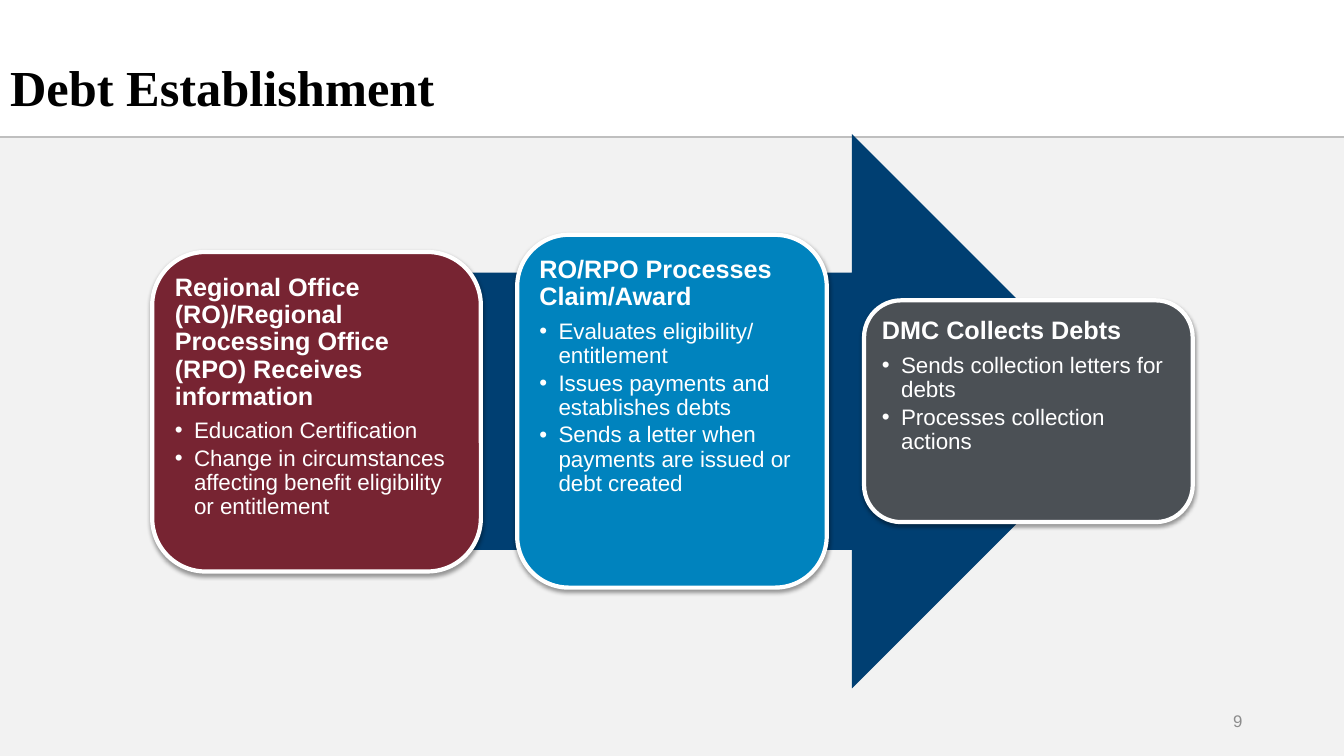
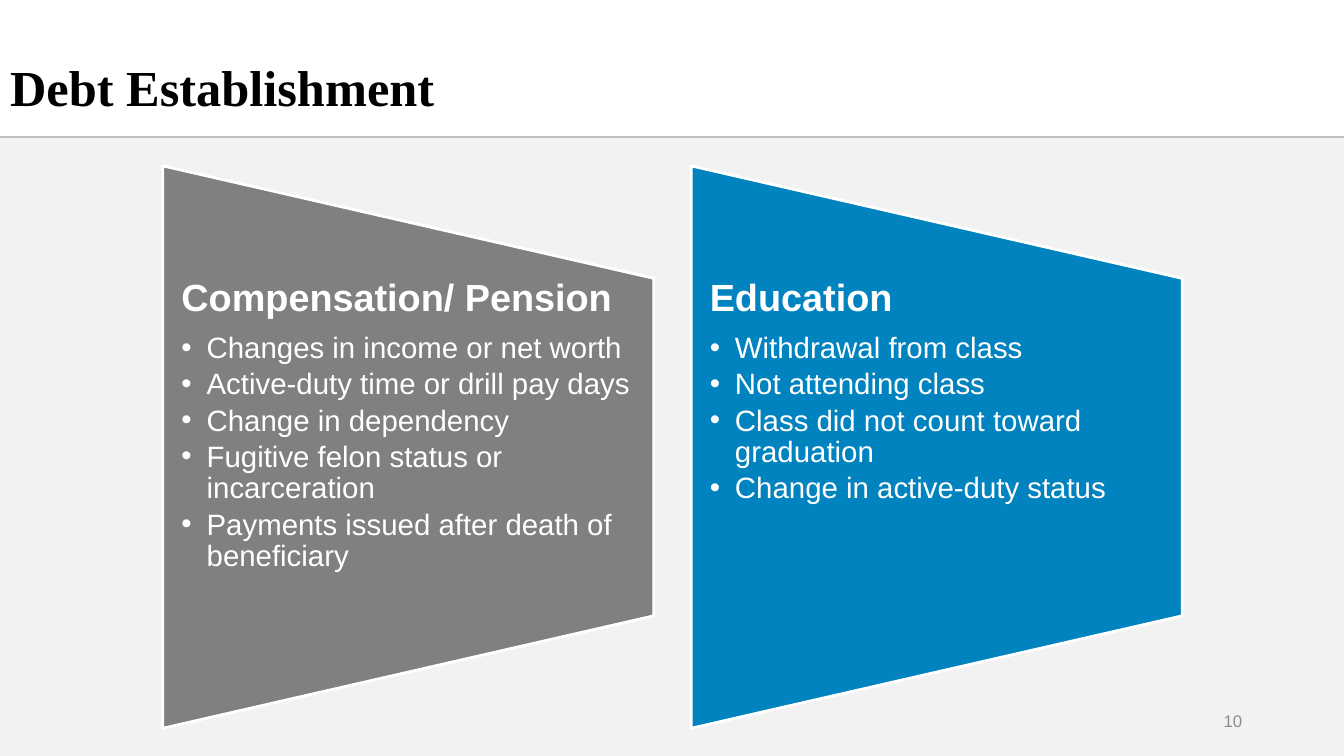
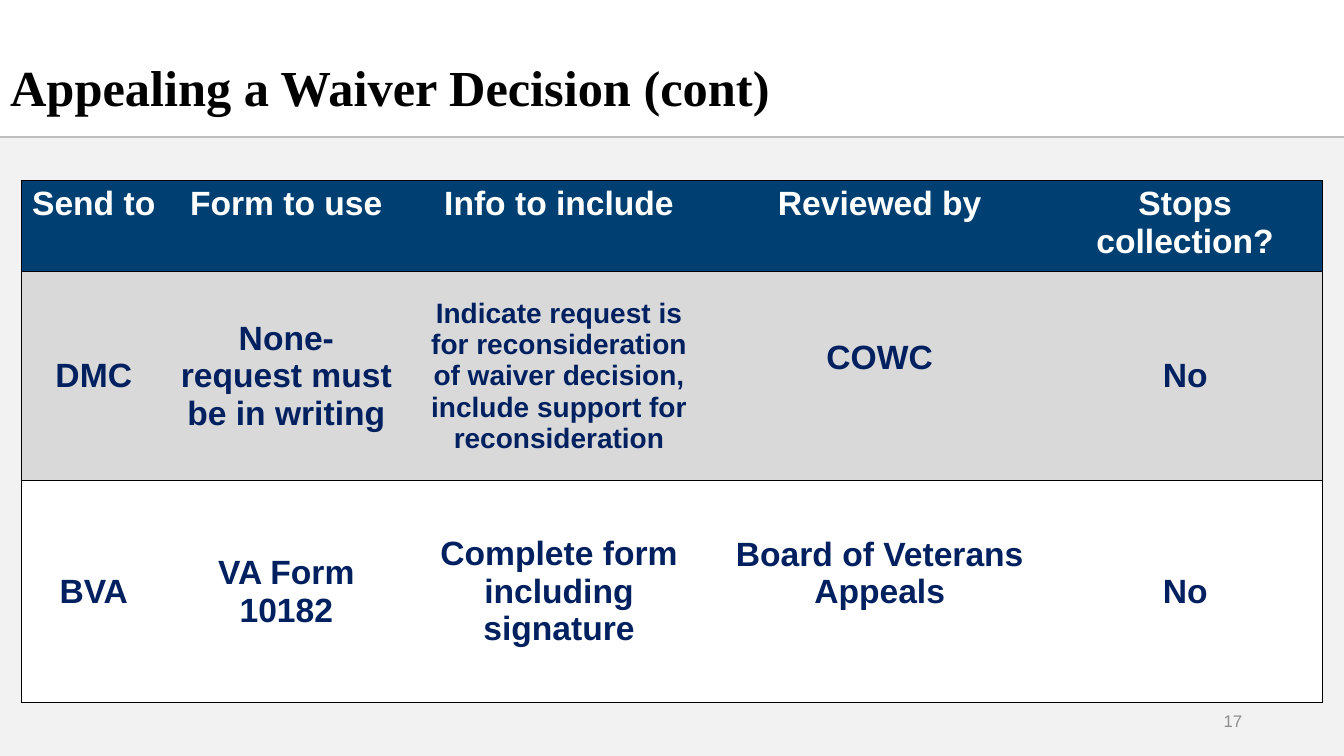
from lxml import etree
from pptx import Presentation
from pptx import util as u
from pptx.dml import color
from pptx.enum import shapes, text
from pptx.oxml import ns

Inches, Pt = u.Inches, u.Pt
NAVY, BLUE, WHITE = "003F72", "0083BE", "FFFFFF"


def rgb(value):
    return color.RGBColor.from_string(value)


def write(paragraph, words, ink, **formats):
    run = paragraph.add_run()
    run.text = words
    run.font.color.rgb = rgb(ink)
    for key, value in formats.items():
        setattr(run.font, key, value)


deck = Presentation()
deck.slide_width, deck.slide_height = Inches(13.33), Inches(7.5)
layout = deck.slide_layouts[5]
titles = [
    ("Debt Establishment", "9"),
    ("Debt Establishment", "10"),
    ("Appealing a Waiver Decision (cont)", "17"),
]
for heading, number in titles:
    slide = deck.slides.add_slide(layout)
    title = slide.shapes.title
    for key, value in dict(left=0, top=0.42, width=9, height=0.95).items():
        setattr(title, key, Inches(value))
    title.text_frame.vertical_anchor = text.MSO_ANCHOR.MIDDLE
    line = title.text_frame.paragraphs[0]
    line.alignment, line.line_spacing = text.PP_ALIGN.LEFT, 0.9
    write(line, heading, "000000", name="Times New Roman", size=Pt(36), bold=True)

    page = slide.shapes.add_textbox(Inches(9.42), Inches(6.95), Inches(3), Inches(0.4))
    page.text_frame.word_wrap = True
    page.text_frame.vertical_anchor = text.MSO_ANCHOR.MIDDLE
    page.text_frame.paragraphs[0].alignment = text.PP_ALIGN.RIGHT
    write(page.text_frame.paragraphs[0], number, "8C8C8C", name="Arial", size=Pt(12))

process, causes, appeals = deck.slides

backdrop = process.shapes.add_shape(
    shapes.MSO_SHAPE.RECTANGLE, 0, Inches(1.37), Inches(13.33), Inches(6.13)
)
backdrop.shadow.inherit = False
backdrop.fill.solid()
backdrop.fill.fore_color.rgb = rgb("F2F2F2")
backdrop.line.fill.background()
rule = process.shapes.add_connector(
    shapes.MSO_CONNECTOR.STRAIGHT, 0, Inches(1.36), Inches(13.33), Inches(1.36)
)
rule.line.color.rgb = rgb("BFBFBF")
rule.line.width = Pt(1.5)
etree.SubElement(rule.element.spPr, ns.qn("a:effectLst"))
for position, part in enumerate((backdrop, rule), 2):
    layout.shapes.element.insert(position, part.element)

arrow = process.shapes.add_shape(
    shapes.MSO_SHAPE.RIGHT_ARROW, Inches(2.13), Inches(1.33), Inches(9.07), Inches(5.5)
)
arrow.shadow.inherit = False
arrow.fill.solid()
arrow.fill.fore_color.rgb = rgb(NAVY)
arrow.line.fill.background()

panels = []
steps = [
    ((1.51, 2.5, 3.26, 3.17), "772432",
     "Regional Office (RO)/Regional Processing Office (RPO) Receives information",
     ["Education Certification",
      "Change in circumstances affecting benefit eligibility or entitlement"]),
    ((5.13, 2.33, 3.07, 3.5), BLUE, "RO/RPO Processes Claim/Award",
     ["Evaluates eligibility/ entitlement",
      "Issues payments and establishes debts",
      "Sends a letter when payments are issued or debt created"]),
    ((8.57, 2.98, 3.26, 2.2), "4B5055", "DMC Collects Debts",
     ["Sends collection letters for debts", "Processes collection actions"]),
]
for box, fill, heading, points in steps:
    step = process.shapes.add_shape(
        shapes.MSO_SHAPE.ROUNDED_RECTANGLE, *map(Inches, box)
    )
    step.shadow.inherit = False
    step.fill.solid()
    step.fill.fore_color.rgb = rgb(fill)
    step.line.color.rgb = rgb(WHITE)
    step.line.width = Pt(3)
    shadow = etree.SubElement(
        step.element.spPr.find(ns.qn("a:effectLst")), ns.qn("a:outerShdw"),
        blurRad=str(Pt(3.1)), dist=str(Pt(1.6)), dir="5400000", rotWithShape="0",
    )
    shade = etree.SubElement(shadow, ns.qn("a:srgbClr"), val="000000")
    etree.SubElement(shade, ns.qn("a:alpha"), val="38000")
    panels.append((step.text_frame, heading, points, 18, 16, 0.19, 0.07, 0.07))

groups = [
    (1.61, "808080", "Compensation/ Pension",
     ["Changes in income or net worth",
      "Active-duty time or drill pay days",
      "Change in dependency",
      "Fugitive felon status or incarceration",
      "Payments issued after death of beneficiary"]),
    (6.85, BLUE, "Education",
     ["Withdrawal from class",
      "Not attending class",
      "Class did not count toward graduation",
      "Change in active-duty status"]),
]
for left, fill, heading, points in groups:
    wedge = causes.shapes.add_shape(
        shapes.MSO_SHAPE.FLOWCHART_MANUAL_OPERATION,
        Inches(left - 0.35), Inches(2), Inches(5.58), Inches(4.87),
    )
    wedge.rotation = 270
    wedge.shadow.inherit = False
    wedge.fill.solid()
    wedge.fill.fore_color.rgb = rgb(fill)
    wedge.line.color.rgb = rgb(WHITE)
    wedge.line.width = Pt(2)
    cause = causes.shapes.add_textbox(
        Inches(left), Inches(2.77), Inches(4.87), Inches(3.35)
    )
    panels.append((cause.text_frame, heading, points, 27, 21, 0.25, 0.19, 0))

for frame, heading, points, heading_size, point_size, indent, side, edge in panels:
    frame.word_wrap = True
    frame.vertical_anchor = text.MSO_ANCHOR.TOP
    frame.margin_left = frame.margin_right = Inches(side)
    frame.margin_top = frame.margin_bottom = Inches(edge)
    for order, words in enumerate([heading, *points]):
        line = frame.add_paragraph() if order else frame.paragraphs[0]
        size = point_size if order else heading_size
        if order:
            properties = line._p.get_or_add_pPr()
            properties.set("marL", str(Inches(indent)))
            properties.set("indent", str(-Inches(indent)))
            etree.SubElement(properties, ns.qn("a:buFont"), typeface="Arial")
            etree.SubElement(properties, ns.qn("a:buChar"), char="•")
        line.alignment = text.PP_ALIGN.LEFT
        line.line_spacing = 0.9
        line.space_after = Pt(size * (0.15 if order else 0.35))
        write(line, words, WHITE, name="Arial", size=Pt(size), bold=not order)

rows = [
    ("Send to", "Form to use", "Info to include", "Reviewed by", "Stops collection?"),
    ("DMC", "None- request must be in writing",
     "Indicate request is for reconsideration of waiver decision, "
     "include support for reconsideration", "COWC", "No"),
    ("BVA", "VA Form 10182", "Complete form including signature",
     "Board of Veterans Appeals", "No"),
]
widths = [1.44, 2.38, 3.03, 3.33, 2.73]
heights = [0.83, 2.08, 2.2]
fills = [NAVY, "D9D9D9", WHITE]
options = appeals.shapes.add_table(
    len(rows), len(widths), Inches(0.21), Inches(1.79),
    Inches(sum(widths)), Inches(sum(heights)),
).table
for column, width in zip(options.columns, widths):
    column.width = Inches(width)
for r, entries in enumerate(rows):
    options.rows[r].height = Inches(heights[r])
    for c, words in enumerate(entries):
        cell = options.cell(r, c)
        cell.fill.solid()
        cell.fill.fore_color.rgb = rgb(fills[r])
        cell.vertical_anchor = text.MSO_ANCHOR.MIDDLE if r else text.MSO_ANCHOR.TOP
        if r and c == 3:
            cell.margin_bottom = Inches(0.42)
        line = cell.text_frame.paragraphs[0]
        line.alignment = text.PP_ALIGN.CENTER
        size = 20 if (r, c) == (1, 2) else 24
        write(line, words, "002060" if r else WHITE,
              name="Arial", size=Pt(size), bold=True)
        edges = dict(lnL=c == 0, lnR=c == len(widths) - 1, lnT=True, lnB=True)
        for order, (edge, visible) in enumerate(edges.items()):
            border = etree.Element(ns.qn("a:" + edge), w=str(Pt(1)))
            if visible:
                ink = etree.SubElement(border, ns.qn("a:solidFill"))
                etree.SubElement(ink, ns.qn("a:srgbClr"), val="000000")
            else:
                etree.SubElement(border, ns.qn("a:noFill"))
            cell._tc.get_or_add_tcPr().insert(order, border)

deck.save("out.pptx")
